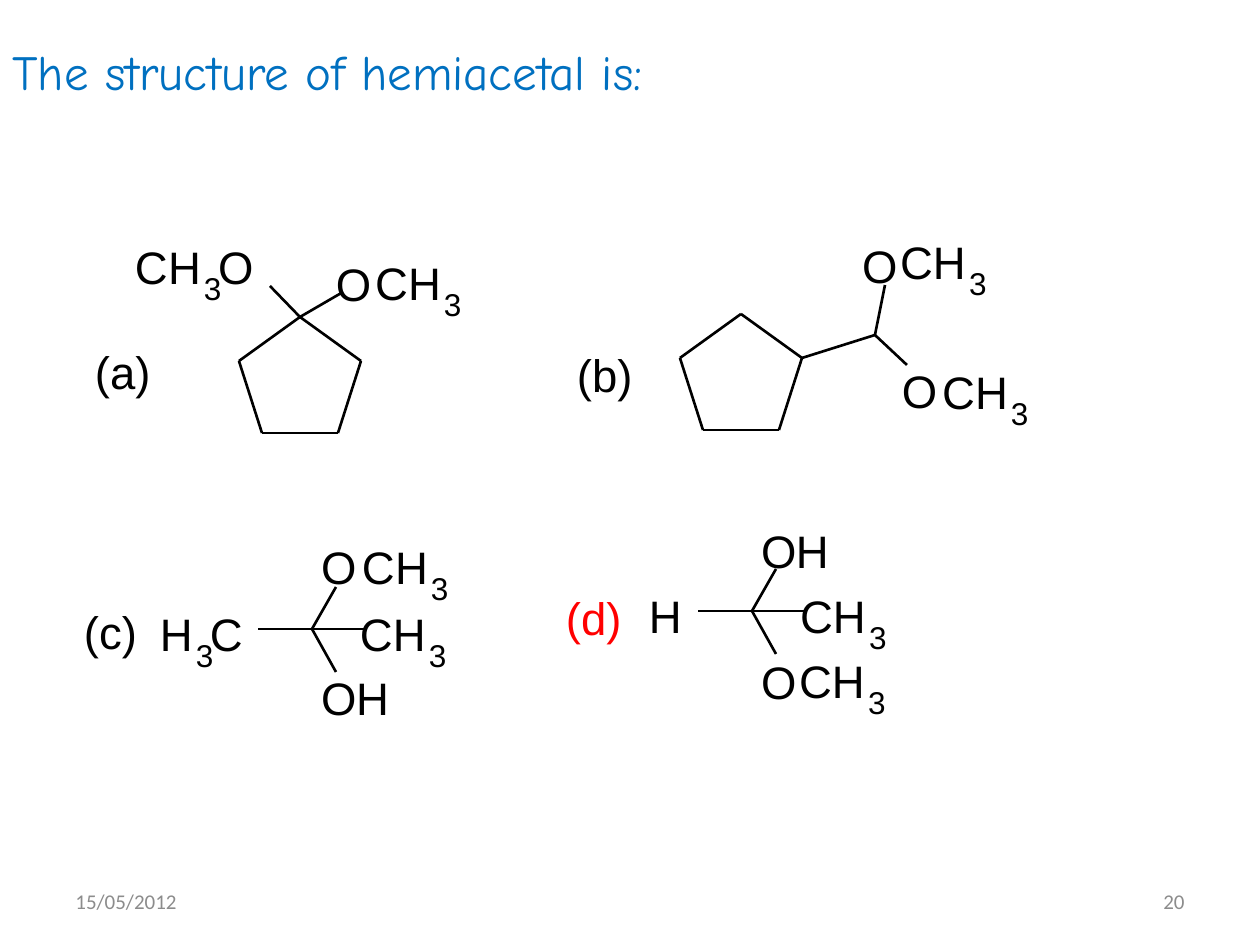
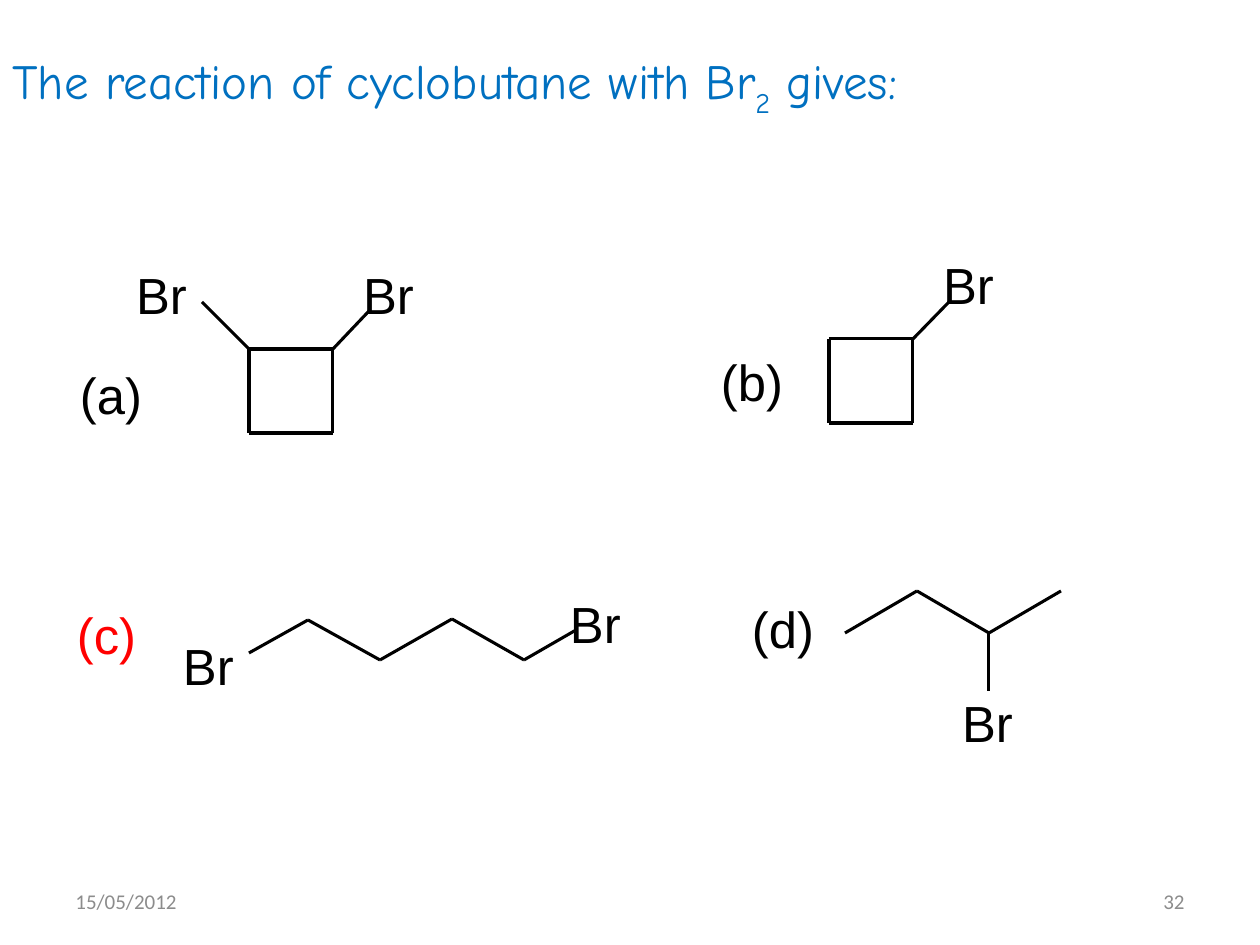
"""Two quiz slides on organic structures, drawn with bonds and atom labels."""
from itertools import pairwise
from math import cos, radians, sin

from lxml.etree import SubElement
from pptx import Presentation
from pptx.dml.color import RGBColor
from pptx.enum.shapes import MSO_CONNECTOR as Connector
from pptx.enum.text import MSO_ANCHOR as Anchor, PP_ALIGN as Align
from pptx.oxml.ns import qn
from pptx.util import Emu, Pt

PX_PER_INCH = 126
COLORS = {"title": "0070C0", "ink": "000000", "answer": "FF0000", "footer": "8C8C8C"}
ATOM_ADVANCE = {"C": 33, "H": 36, "O": 35, "3": 14}
SUBSCRIPT_DROP = 30


def px(length):
    return Emu(round(length * 914400 / PX_PER_INCH))


def style(run, size, font, color):
    run.font.size = Pt(size)
    run.font.name = font
    run.font.color.rgb = RGBColor.from_string(COLORS[color])


def add_frame(slide, x, y, width, height):
    frame = slide.shapes.add_textbox(px(x), px(y), px(width), px(height)).text_frame
    frame.word_wrap = True
    return frame


def add_title(slide, y, width, *parts):
    """Write the title, with every second part as a subscript."""
    line = add_frame(slide, 0, y, width, 111).paragraphs[0]
    for index, part in enumerate(parts):
        run = line.add_run()
        run.text = part
        style(run, 28, "Comic Neue", "title")
        if index % 2:
            run._r.get_or_add_rPr().set("baseline", "-30000")


def add_footer(slide, number):
    for x, words, align in ((63, "15/05/2012", Align.LEFT), (903, number, Align.RIGHT)):
        frame = add_frame(slide, x, 876, 294, 50)
        frame.vertical_anchor = Anchor.MIDDLE
        frame.text = words
        line = frame.paragraphs[0]
        line.alignment = align
        style(line.runs[0], 12, "Calibri", "footer")


def add_label(slide, words, x, y, size, color="ink"):
    frame = add_frame(slide, x, y, 27 + 20 * len(words), round(size * 2.3))
    frame.margin_left = frame.margin_right = frame.margin_top = frame.margin_bottom = 0
    frame.text = words
    style(frame.paragraphs[0].runs[0], size, "Arial", color)


def add_options(slide, size, places, answer):
    for letter, (x, y) in zip("abcd", places):
        add_label(slide, f"({letter})", x, y, size, "answer" if letter == answer else "ink")


def add_formula(slide, formula, x, y):
    """Set a formula atom by atom, with the digits lowered."""
    for symbol in formula:
        if symbol.isdigit():
            add_label(slide, symbol, x, y + SUBSCRIPT_DROP, 18)
        else:
            add_label(slide, symbol, x, y, 26)
        x += ATOM_ADVANCE[symbol]


def add_bond(slide, start, end, weight):
    bond = slide.shapes.add_connector(Connector.STRAIGHT, *map(px, (*start, *end)))
    bond.line.color.rgb = RGBColor.from_string(COLORS["ink"])
    bond.line.width = Pt(weight)
    SubElement(bond._element.spPr, qn("a:effectLst"))


def add_chain(slide, points, weight):
    for start, end in pairwise(points):
        add_bond(slide, start, end, weight)


def add_branches(slide, centre, ends, weight):
    for end in ends:
        add_bond(slide, centre, end, weight)


def add_ring(slide, centre, radius, sides, first_angle, weight):
    """Draw a regular ring and return its corners, clockwise."""
    angles = [radians(first_angle + 360 * i / sides) for i in range(sides)]
    corners = [(round(centre[0] + radius * cos(a)), round(centre[1] + radius * sin(a)))
               for a in angles]
    add_chain(slide, corners + corners[:1], weight)
    return corners


def build_hemiacetal(slide):
    weight = 1.5
    add_title(slide, 35, 748, "The structure of hemiacetal is:")
    add_footer(slide, "20")

    ketal_ring = add_ring(slide, (300, 381), 64, 5, -90, weight)
    add_branches(slide, ketal_ring[0], [(343, 292), (270, 286)], weight)
    acetal_ring = add_ring(slide, (741, 378), 64, 5, -90, weight)
    add_chain(slide, [acetal_ring[1], (875, 335), (907, 365)], weight)
    add_bond(slide, (875, 335), (885, 285), weight)
    for x, y in ((312, 629), (752, 611)):
        ends = [(x - 54, y), (x + 24, y - 42), (x + 54, y), (x + 24, y + 43)]
        add_branches(slide, (x, y), ends, weight)

    formulas = (
        ("CH3O", 135, 239), ("O", 336, 256), ("CH3", 375, 255),
        ("O", 862, 238), ("CH3", 900, 234), ("O", 902, 363), ("CH3", 942, 364),
        ("H3C", 160, 606), ("O", 321, 539), ("CH3", 362, 539),
        ("CH3", 360, 606), ("OH", 321, 670),
        ("H", 649, 588), ("OH", 761, 523), ("CH3", 800, 588),
        ("O", 761, 654), ("CH3", 799, 653),
    )
    for formula, x, y in formulas:
        add_formula(slide, formula, x, y)
    add_options(slide, 26, ((95, 344), (577, 347), (84, 604), (566, 590)), "d")


def build_cyclobutane(slide):
    weight = 1.75
    add_title(slide, 44, 1024, "The reaction of cyclobutane with Br", "2", " gives:")
    add_footer(slide, "32")

    dibromo_ring = add_ring(slide, (291, 391), 59, 4, -45, weight)
    add_bond(slide, dibromo_ring[0], (369, 311), weight)
    add_bond(slide, dibromo_ring[3], (202, 302), weight)
    bromo_ring = add_ring(slide, (871, 381), 59, 4, -45, weight)
    add_bond(slide, bromo_ring[0], (949, 302), weight)
    dibromobutane = [(249, 653), (308, 620), (380, 660), (452, 619), (524, 660), (576, 630)]
    add_chain(slide, dibromobutane, weight)
    bromobutane = [(845 + 72 * i, 591 if i % 2 else 633) for i in range(4)]
    add_chain(slide, bromobutane, weight)
    add_bond(slide, bromobutane[2], (989, 691), weight)

    for x, y in ((363, 264), (136, 264), (943, 254), (183, 635), (570, 593), (962, 692)):
        add_label(slide, "Br", x, y, 29)
    add_options(slide, 29, ((80, 364), (721, 351), (77, 604), (752, 598)), "c")


def main():
    deck = Presentation()
    deck.slide_width, deck.slide_height = px(1260), px(945)
    blank = deck.slide_layouts[6]
    for build in (build_hemiacetal, build_cyclobutane):
        build(deck.slides.add_slide(blank))
    deck.save("out.pptx")


if __name__ == "__main__":
    main()
